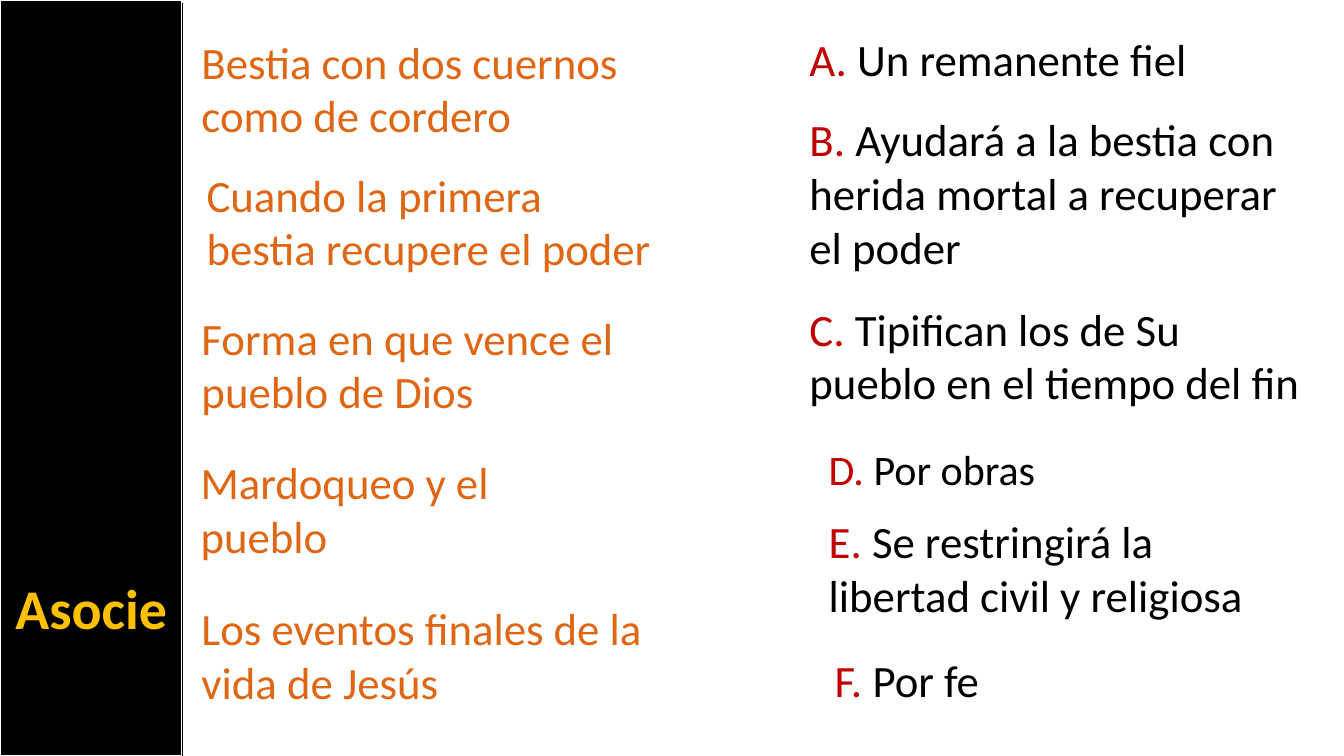
from dataclasses import dataclass

from lxml import etree
from pptx import Presentation
from pptx.dml.color import RGBColor
from pptx.enum import shapes, text
from pptx.oxml import ns
from pptx.util import Pt

PX = 9144  # EMU per px, 100 px to the inch
WIDTH, HEIGHT = 1333, 750
BAND_WIDTH = 181


@dataclass(frozen=True)
class Theme:
    font: str = "Calibri"
    black: str = "000000"
    white: str = "FFFFFF"
    prompt: str = "DF6613"
    letter: str = "C00000"
    title: str = "FFC000"
    body_size: int = 32
    small_size: int = 30
    title_size: int = 40


THEME = Theme()

# left, top, width, height, wording
PROMPTS = [
    (190, 29, 438, 118, "Bestia con dos cuernos como de cordero"),
    (195, 161, 462, 118, "Cuando la primera bestia recupere el poder"),
    (190, 303, 508, 118, "Forma en que vence el pueblo de Dios"),
    (189, 446, 439, 118, "Mardoqueo y el pueblo"),
    (190, 591, 459, 118, "Los eventos finales de la vida de Jesús"),
]

# left, top, width, height, wording, type size
ANSWERS = [
    (793, 27, 489, 64, "Un remanente fiel", THEME.body_size),
    (793, 106, 489, 172,
     "Ayudará a la bestia con herida mortal a recuperar el poder", THEME.body_size),
    (793, 294, 511, 118,
     "Tipifican los de Su pueblo en el tiempo del fin", THEME.body_size),
    (812, 435, 343, 61, "Por obras", THEME.small_size),
    (812, 505, 441, 118,
     "Se restringirá la libertad civil y religiosa", THEME.body_size),
    (818, 643, 290, 64, "Por fe", THEME.body_size),
]


def px(*lengths):
    return [n * PX for n in lengths]


def rgb(color):
    return RGBColor.from_string(color)


def add_text(slide, box, runs, size, bold=False, align=text.PP_ALIGN.LEFT):
    """Add a wrapped one-paragraph text box; runs are (wording, colour) pairs."""
    tf = slide.shapes.add_textbox(*px(*box)).text_frame
    tf.word_wrap = True
    tf.auto_size = text.MSO_AUTO_SIZE.SHAPE_TO_FIT_TEXT
    p = tf.paragraphs[0]
    p.alignment = align
    for wording, color in runs:
        r = p.add_run()
        r.text = wording
        r.font.name = THEME.font
        r.font.size = Pt(size)
        r.font.bold = bold
        r.font.color.rgb = rgb(color)


def add_band(slide):
    sp = slide.shapes.add_shape(
        shapes.MSO_SHAPE.RECTANGLE, *px(0, 0, BAND_WIDTH, HEIGHT))
    sp.shadow.inherit = False
    sp.fill.solid()
    sp.fill.fore_color.rgb = rgb(THEME.black)
    sp.line.color.rgb = rgb(THEME.white)
    sp.line.width = Pt(1.5)


def add_band_edge(slide):
    edge = slide.shapes.add_connector(
        shapes.MSO_CONNECTOR.STRAIGHT, *px(BAND_WIDTH, 3, BAND_WIDTH, HEIGHT))
    edge.line.color.rgb = rgb(THEME.black)
    edge.line.width = Pt(1)
    etree.SubElement(edge._element.spPr, ns.qn("a:effectLst"))


def main():
    prs = Presentation()
    prs.slide_width, prs.slide_height = px(WIDTH, HEIGHT)
    slide = prs.slides.add_slide(prs.slide_layouts[6])

    add_band(slide)
    for *box, wording in PROMPTS:
        add_text(slide, box, [(wording, THEME.prompt)], THEME.body_size)
    for letter, (*box, wording, size) in zip("ABCDEF", ANSWERS):
        runs = [(f"{letter}. ", THEME.letter), (wording, THEME.black)]
        add_text(slide, box, runs, size)
    add_text(slide, (0, 564, BAND_WIDTH, 77), [("Asocie", THEME.title)],
             THEME.title_size, bold=True, align=text.PP_ALIGN.CENTER)
    add_band_edge(slide)

    prs.save("out.pptx")


if __name__ == "__main__":
    main()
